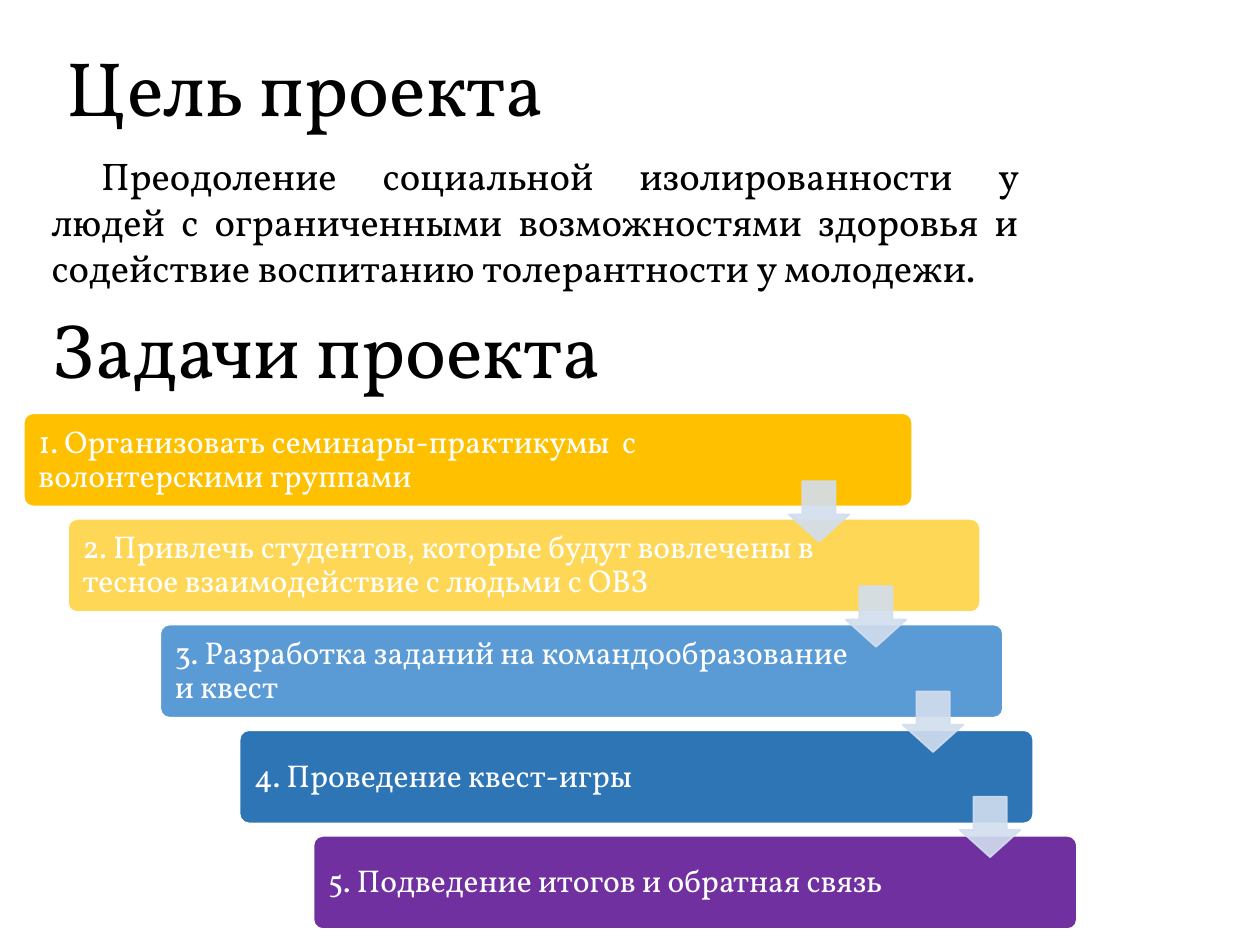
from pptx import Presentation
from pptx.dml.color import RGBColor as Rgb
from pptx.enum.shapes import MSO_SHAPE as Kind
from pptx.enum.text import MSO_ANCHOR as Anchor, MSO_AUTO_SIZE as Auto, PP_ALIGN as Align
from pptx.oxml.ns import qn
from pptx.util import Cm, Pt
from lxml import etree

HUES = {
    "text": "000000",
    "white": "FFFFFF",
    "gold": "FFC000",
    "sand": "FFD757",
    "sky": "5B9BD5",
    "blue": "2E75B6",
    "plum": "7030A0",
    "arrow": "D2DEEF",
}

TASKS = [
    ("1. Организовать семинары-практикумы  с волонтерскими группами", "gold", 0.48, 17.91),
    ("2. Привлечь студентов, которые будут вовлечены в тесное взаимодействие с людьми с ОВЗ", "sand", 1.37, 18.39),
    ("3. Разработка заданий на командообразование и квест", "sky", 3.23, 16.99),
    ("4. Проведение квест-игры", "blue", 4.83, 16),
    ("5. Подведение итогов и обратная связь", "plum", 6.32, 15.39),
]


class Deck:
    font = "Vollkorn"

    def __init__(self):
        self.prs = Presentation()
        self.prs.slide_width = Cm(25.4)
        self.prs.slide_height = Cm(19.05)
        self.slide = self.prs.slides.add_slide(self.prs.slide_layouts[6])

    def style(self, shape, text, size, hue, space):
        frame = shape.text_frame
        frame.word_wrap = True
        frame.vertical_anchor = Anchor.MIDDLE
        frame.text = text
        para = frame.paragraphs[0]
        para.alignment = Align.LEFT
        para.line_spacing = space
        font = para.runs[0].font
        font.name = self.font
        font.size = Pt(size)
        font.color.rgb = Rgb.from_string(HUES[hue])
        return frame

    def label(self, text, x, y, w, h, size, space=0.9):
        box = self.slide.shapes.add_textbox(Cm(x), Cm(y), Cm(w), Cm(h))
        return self.style(box, text, size, "text", space)

    def body(self, text, x, y, w, h):
        frame = self.label(text, x, y, w, h, 22, 1.0)
        frame.auto_size = Auto.SHAPE_TO_FIT_TEXT
        para = frame.paragraphs[0]
        para.alignment = Align.JUSTIFY
        para._p.get_or_add_pPr().set("indent", str(Cm(1)))

    def block(self, kind, x, y, w, h, fill, line, adjust):
        shape = self.slide.shapes.add_shape(kind, Cm(x), Cm(y), Cm(w), Cm(h))
        shape.shadow.inherit = False
        shape.fill.solid()
        shape.fill.fore_color.rgb = Rgb.from_string(HUES[fill])
        shape.line.color.rgb = Rgb.from_string(HUES[line])
        shape.line.width = Pt(1)
        for i, value in enumerate(adjust):
            shape.adjustments[i] = value
        return shape

    def bar(self, text, hue, x, y, w):
        shape = self.block(Kind.ROUNDED_RECTANGLE, x, y, w, 1.88, hue, "white", [0.1])
        frame = self.style(shape, text, 18, "white", 0.9)
        frame.margin_left = Cm(0.24)
        frame.margin_right = Cm(2.8)
        frame.margin_top = frame.margin_bottom = Cm(0.18)

    def arrow(self, x, y):
        shape = self.block(Kind.DOWN_ARROW, x, y, 1.22, 1.22, "arrow", "arrow", [0.55, 0.45])
        for color in shape._element.spPr.iter(qn("a:srgbClr")):
            etree.SubElement(color, qn("a:alpha")).set("val", "90000")


def main():
    deck = Deck()
    deck.body(
        "Преодоление социальной изолированности у людей с ограниченными возможностями "
        "здоровья и содействие воспитанию толерантности у молодежи.",
        0.79, 2.92, 19.99, 3.07,
    )
    deck.label("Цель проекта", 1.09, 0, 21.89, 3.68, 44)
    deck.label("Задачи проекта", 0.79, 5.54, 22.86, 3.18, 44)
    for i, (text, hue, x, w) in enumerate(TASKS):
        deck.bar(text, hue, x, 8.33 + 2.13 * i, w)
    for i in range(len(TASKS) - 1):
        deck.arrow(15.9 + 1.15 * i, 9.7 + 2.12 * i)
    deck.prs.save("out.pptx")


if __name__ == "__main__":
    main()
